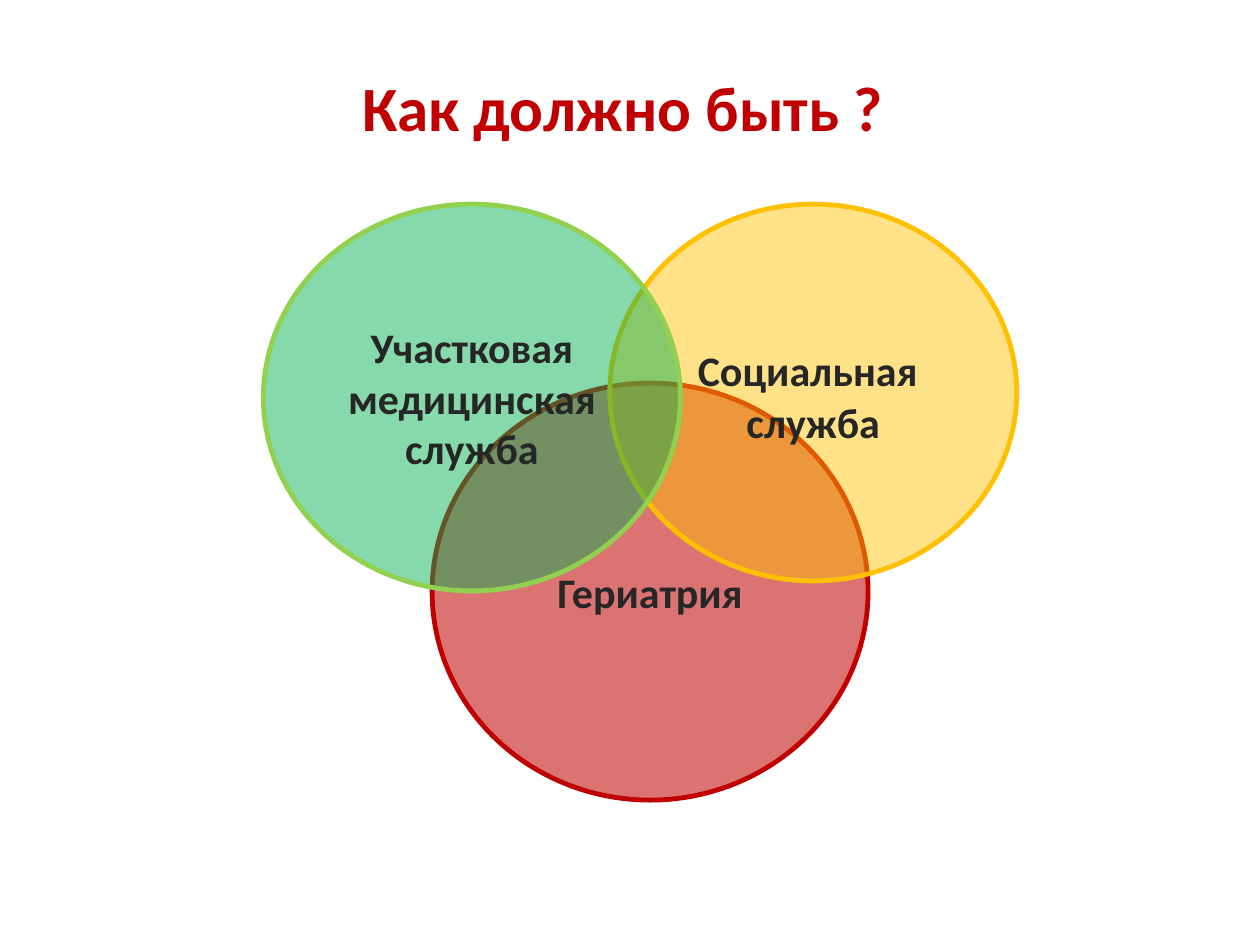
import dataclasses

import lxml.etree
import pptx
import pptx.dml.color
import pptx.enum.shapes
import pptx.enum.text
import pptx.oxml.ns
import pptx.util

Inches = pptx.util.Inches
Pt = pptx.util.Pt
RGB = pptx.dml.color.RGBColor.from_string


@dataclasses.dataclass(frozen=True)
class Theme:
    font: str = "Calibri"
    title_size: float = 36
    label_size: float = 24
    gap_size: float = 28
    outline_width: float = 2.75
    ink: str = "262626"
    red: str = "C00000"
    amber: str = "FFC000"
    green: str = "00B050"
    lime: str = "92D050"


THEME = Theme()

# Each paragraph is a list of (text, size) runs.
TITLE = [[("Как должно быть ? ", THEME.title_size)]]
GERIATRICS = [[("Гериатрия", THEME.label_size)]]
SOCIAL = [
    [("Социальная", THEME.label_size), (" ", THEME.gap_size)],
    [("служба", THEME.label_size)],
]
MEDICAL = [
    [("Участковая", THEME.label_size)],
    [("медицинская служба", THEME.label_size)],
]

# Left, top, width, height within the diagram; text; fill, opacity %, outline.
SERVICES = [
    ((1.34, 1.42, 3.46, 3.31), GERIATRICS, THEME.red, 55, THEME.red),
    ((2.75, 0, 3.23, 2.99), SOCIAL, THEME.amber, 47, THEME.amber),
    ((0, 0, 3.31, 3.07), MEDICAL, THEME.green, 48, THEME.lime),
]


def apply(target, values):
    for name, value in values.items():
        setattr(target, name, value)


def write_text(frame, paragraphs, color):
    """Fill a frame with centred bold paragraphs."""
    apply(frame, {
        "word_wrap": True,
        "vertical_anchor": pptx.enum.text.MSO_ANCHOR.MIDDLE,
    })
    for index, runs in enumerate(paragraphs):
        paragraph = frame.add_paragraph() if index else frame.paragraphs[0]
        paragraph.alignment = pptx.enum.text.PP_ALIGN.CENTER
        for text, size in runs:
            run = paragraph.add_run()
            run.text = text
            apply(run.font, {"name": THEME.font, "size": Pt(size), "bold": True})
            run.font.color.rgb = RGB(color)


def set_opacity(fill_color, shape, percent):
    """Fill a shape with a see-through colour."""
    shape.fill.solid()
    shape.fill.fore_color.rgb = RGB(fill_color)
    qn = pptx.oxml.ns.qn
    color = shape._element.spPr.find(qn("a:solidFill")).find(qn("a:srgbClr"))
    lxml.etree.SubElement(color, qn("a:alpha"), val=str(percent * 1000))


def add_title(slide, left, top, width, height):
    title = slide.shapes.add_textbox(
        Inches(left), Inches(top), Inches(width), Inches(height))
    write_text(title.text_frame, TITLE, THEME.red)


def add_service_circles(slide, left, top):
    """Place the three overlapping services, the hindmost first."""
    for (x, y, width, height), label, fill, opacity, outline in SERVICES:
        circle = slide.shapes.add_shape(
            pptx.enum.shapes.MSO_SHAPE.OVAL,
            Inches(left + x), Inches(top + y), Inches(width), Inches(height))
        circle.shadow.inherit = False
        set_opacity(fill, circle, opacity)
        circle.line.color.rgb = RGB(outline)
        circle.line.width = Pt(THEME.outline_width)
        write_text(circle.text_frame, label, THEME.ink)


def main():
    deck = pptx.Presentation()
    apply(deck, {"slide_width": Inches(10), "slide_height": Inches(7.5)})
    slide = deck.slides.add_slide(deck.slide_layouts[6])
    add_service_circles(slide, 2.09, 1.62)
    add_title(slide, 0.5, 0.3, 9, 1.09)
    deck.save("out.pptx")


if __name__ == "__main__":
    main()
